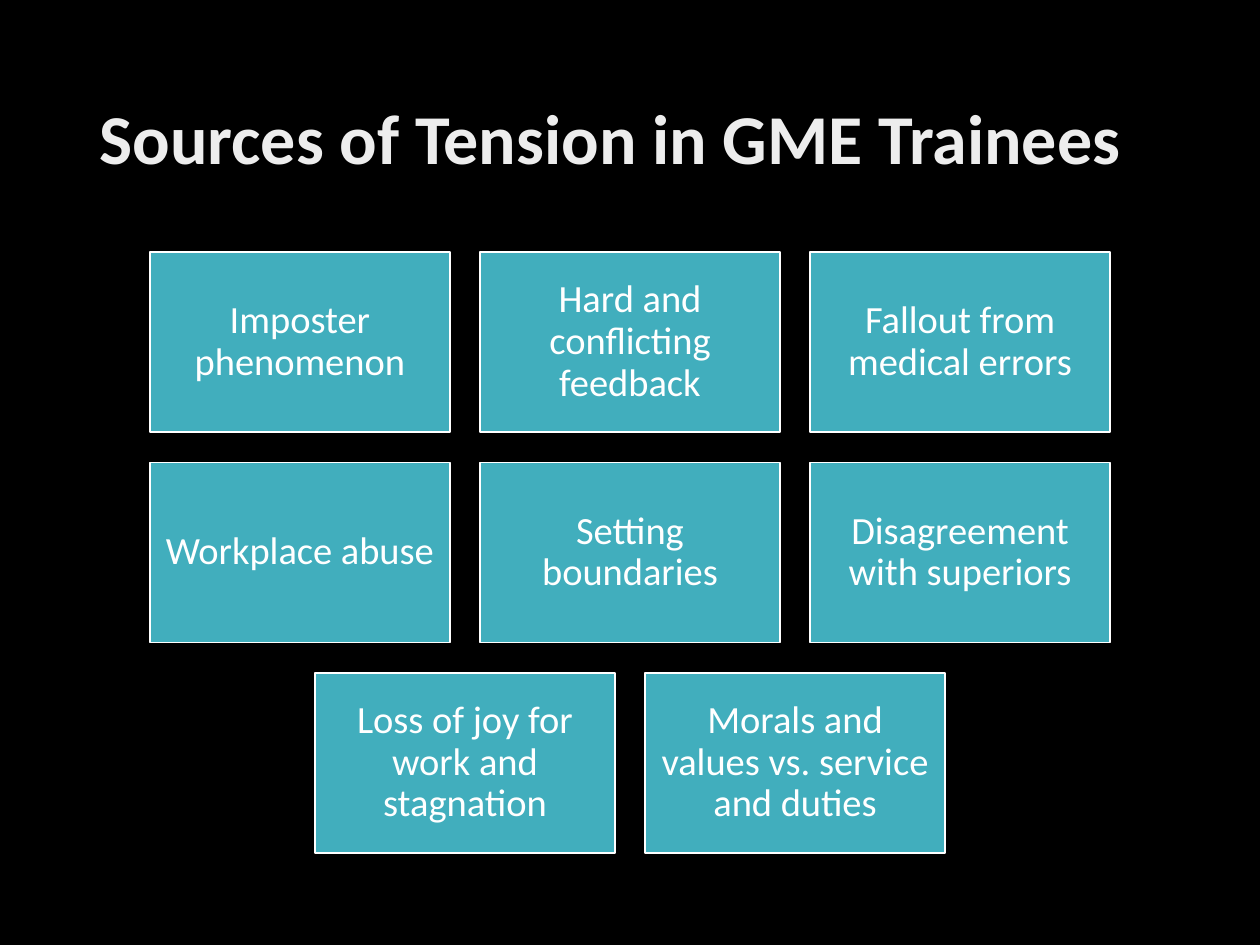
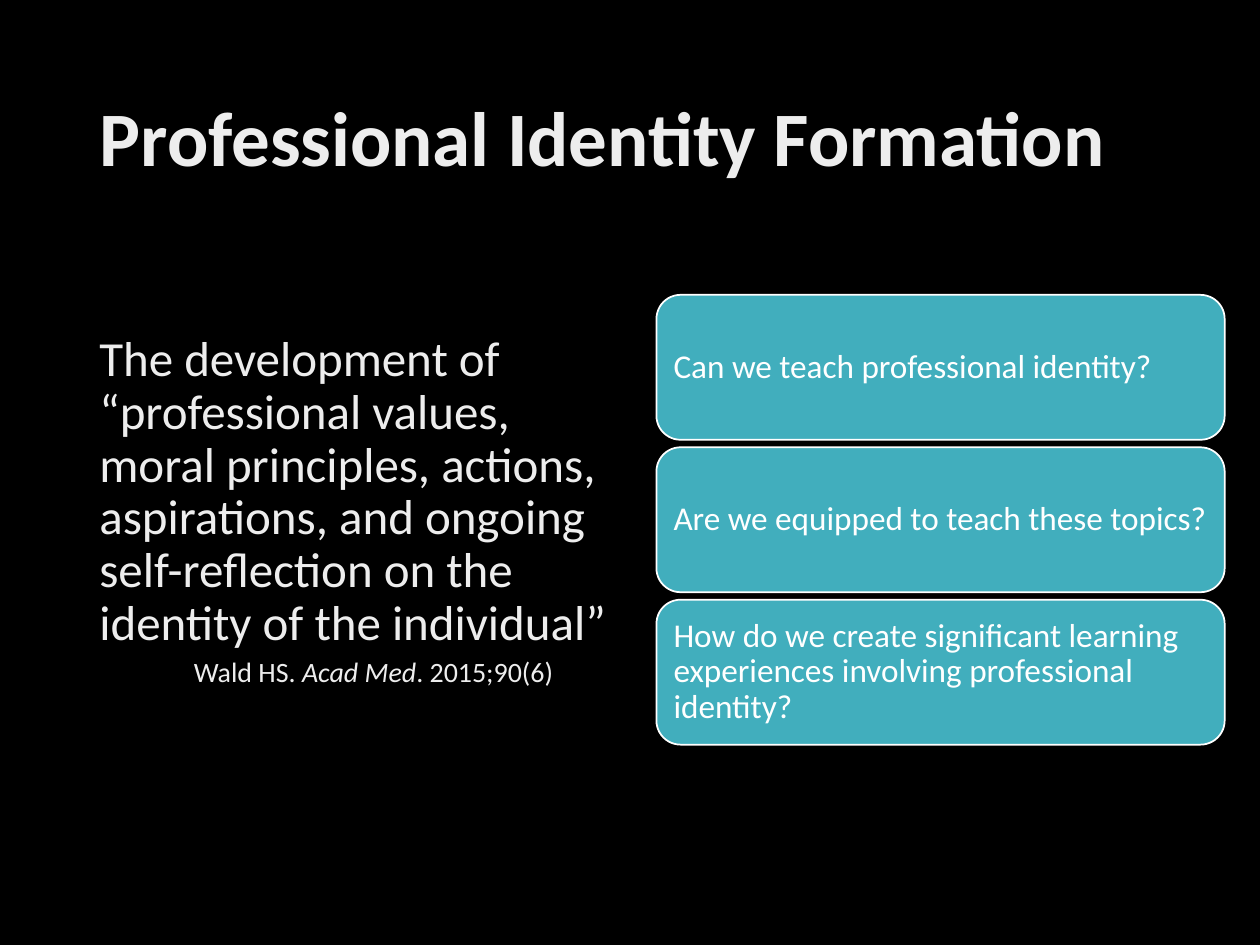
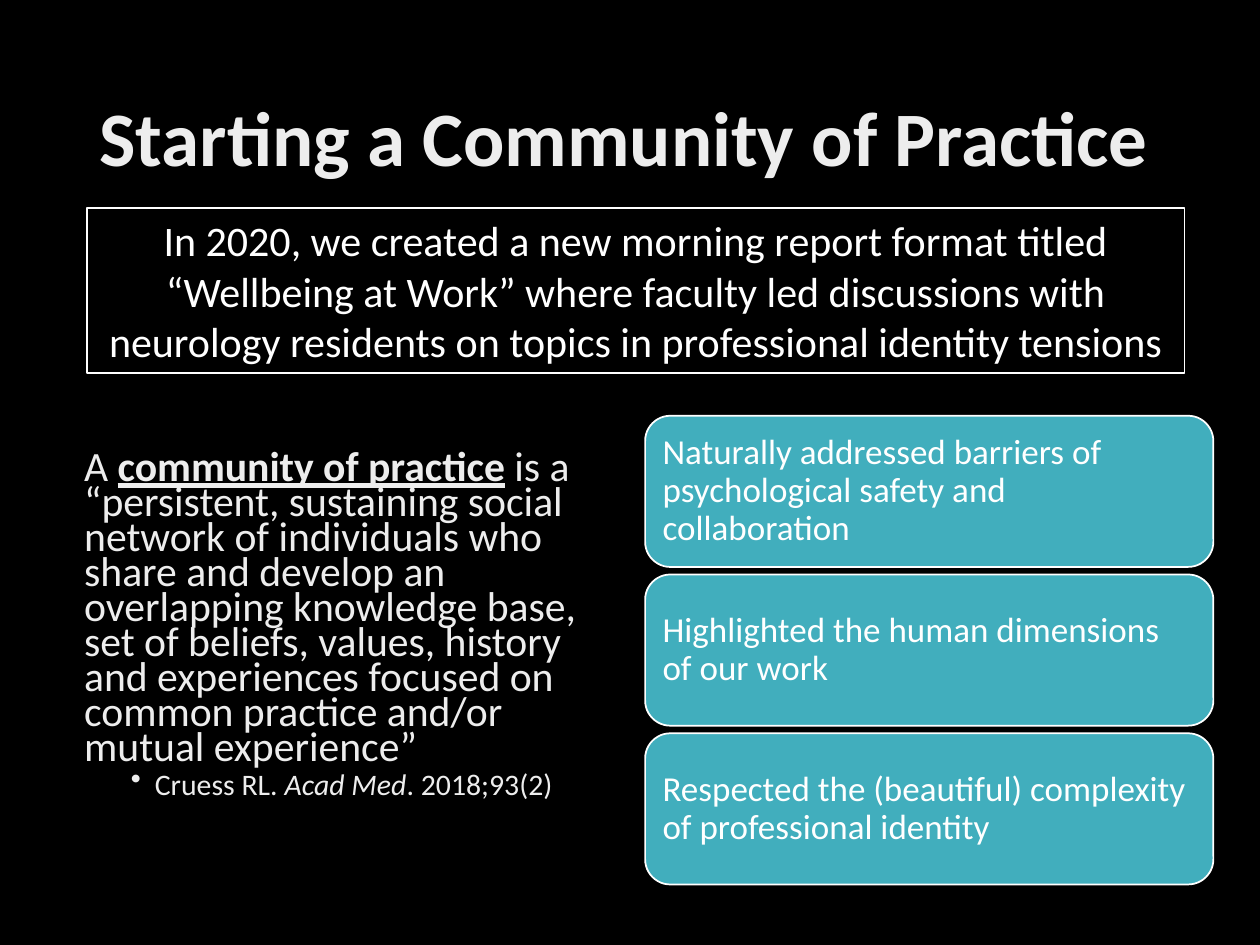
import pptx
import pptx.dml.color
import pptx.enum.shapes
import pptx.enum.text
import pptx.oxml.ns
import pptx.util
import lxml.etree

Inches = pptx.util.Inches
Pt = pptx.util.Pt
Shape = pptx.enum.shapes.MSO_SHAPE
Align = pptx.enum.text.PP_ALIGN
Anchor = pptx.enum.text.MSO_ANCHOR

FONT = "Calibri"
BLACK = "000000"
WHITE = "FFFFFF"
PALE = "EDEDED"
TEAL = "41AEBD"

WIDTH = 10
TILE = (2.38, 1.43)
TILE_GAP = 0.24
CARD_WIDTH = 4.51
CARD_GAP = 0.06

TENSIONS = [
    ["Imposter phenomenon", "Hard and conflicting feedback", "Fallout from medical errors"],
    ["Workplace abuse", "Setting boundaries", "Disagreement with superiors"],
    ["Loss of joy for work and stagnation", "Morals and values vs. service and duties"],
]
TOPICS = [
    "Can we teach professional identity?",
    "Are we equipped to teach these topics?",
    "How do we create significant learning experiences involving professional identity?",
]
GAINS = [
    "Naturally addressed barriers of psychological safety and collaboration",
    "Highlighted the human dimensions of our work",
    "Respected the (beautiful) complexity of professional identity",
]
REPORT = (
    "In 2020, we created a new morning report format titled “Wellbeing at Work” "
    "where faculty led discussions with neurology residents on topics in "
    "professional identity tensions"
)
VALUES = [(
    "The development of “professional values, moral principles, actions, "
    "aspirations, and ongoing self-reflection on the identity of the individual”", {}
)]
WALD = [("Wald HS. ", {}), ("Acad Med", {"italic": True}), (". 2015;90(6)", {})]
GROUP = [
    ("A ", {}),
    ("community of practice", {"bold": True, "underline": True}),
    (" is a “persistent, sustaining social network of individuals who share and "
     "develop an overlapping knowledge base, set of beliefs, values, history and "
     "experiences focused on common practice and/or mutual experience”", {}),
]
CRUESS = [("Cruess RL. ", {}), ("Acad Med", {"italic": True}), (". 2018;93(2)", {})]


def color(code):
    return pptx.dml.color.RGBColor.from_string(code)


def apply(target, values):
    for name, value in values.items():
        setattr(target, name, value)


def style(font, size, code, **extra):
    apply(font, {"name": FONT, "size": Pt(size), **extra})
    font.color.rgb = color(code)


def place(shape, left, top, width, height):
    apply(shape, {"left": Inches(left), "top": Inches(top),
                  "width": Inches(width), "height": Inches(height)})


def add_page(deck, title, size=44):
    slide = deck.slides.add_slide(deck.slide_layouts[5])
    head = slide.shapes.title
    place(head, 0.69, 0.4, 8.62, 1.45)
    apply(head.text_frame, {"text": title, "word_wrap": True, "vertical_anchor": Anchor.MIDDLE})
    para = head.text_frame.paragraphs[0]
    apply(para, {"alignment": Align.LEFT, "line_spacing": 0.9})
    style(para.runs[0].font, size, PALE, bold=True)
    return slide


def add_box(slide, kind, spot, text, size, fill=TEAL, line=1, inset=None,
            align=Align.CENTER, spacing=0.9):
    box = slide.shapes.add_shape(kind, *map(Inches, spot))
    box.shadow.inherit = False
    if fill:
        box.fill.solid()
        box.fill.fore_color.rgb = color(fill)
    else:
        box.fill.background()
    box.line.color.rgb = color(WHITE)
    box.line.width = Pt(line)
    frame = box.text_frame
    apply(frame, {"text": text, "word_wrap": True, "vertical_anchor": Anchor.MIDDLE})
    if inset:
        sides = ("left", "top", "right", "bottom")
        apply(frame, {f"margin_{side}": Inches(inset) for side in sides})
    para = frame.paragraphs[0]
    apply(para, {"alignment": align, "line_spacing": spacing})
    style(para.runs[0].font, size, WHITE)


def add_tiles(slide, rows, top):
    width, height = TILE
    for row, names in enumerate(rows):
        span = len(names) * (width + TILE_GAP) - TILE_GAP
        for col, name in enumerate(names):
            left = (WIDTH - span) / 2 + col * (width + TILE_GAP)
            spot = (left, top + row * (height + TILE_GAP), width, height)
            add_box(slide, Shape.RECTANGLE, spot, name, 22, inset=0.09)


def add_cards(slide, texts, left, top, height, size):
    for row, text in enumerate(texts):
        spot = (left, top + row * (height + CARD_GAP), CARD_WIDTH, height)
        add_box(slide, Shape.ROUNDED_RECTANGLE, spot, text, size, inset=0.08, align=Align.LEFT)


def add_runs(para, parts, size, spacing):
    para.line_spacing = spacing
    for text, extra in parts:
        run = para.add_run()
        run.text = text
        style(run.font, size, PALE, **extra)


def indent(para, left, first, mark=None):
    props = para._p.get_or_add_pPr()
    props.set("marL", str(Inches(left)))
    props.set("indent", str(Inches(first)))
    if mark:
        bullet = lxml.etree.SubElement(props, pptx.oxml.ns.qn("a:buChar"))
        bullet.set("char", mark)


def add_quote(slide, left, top, quote, size, cite, small, spacing, margin, first=0, mark=None):
    box = slide.shapes.add_textbox(*map(Inches, (left, top, 4.31, 3.05)))
    frame = box.text_frame
    frame.word_wrap = True
    add_runs(frame.paragraphs[0], quote, size, spacing)
    para = frame.add_paragraph()
    indent(para, margin, first, mark)
    para.space_before = Pt(3.8)
    add_runs(para, cite, small, spacing)


def main():
    deck = pptx.Presentation()
    apply(deck, {"slide_width": Inches(WIDTH), "slide_height": Inches(7.5)})
    back = deck.slide_master.background.fill
    back.solid()
    back.fore_color.rgb = color(BLACK)

    slide = add_page(deck, "Sources of Tension in GME Trainees", 40)
    add_tiles(slide, TENSIONS, 2)

    slide = add_page(deck, "Professional Identity Formation")
    add_quote(slide, 0.69, 2.6, VALUES, 28, WALD, 16, 0.9, 0.75)
    add_cards(slide, TOPICS, 5.21, 2.34, 1.15, 19)

    slide = add_page(deck, "Starting a Community of Practice")
    add_quote(slide, 0.57, 3.55, GROUP, 23.8, CRUESS, 17, 0.7, 0.56, -0.19, "•")
    add_cards(slide, GAINS, 5.12, 3.3, 1.2, 20)
    add_box(slide, Shape.RECTANGLE, (0.69, 1.65, 8.71, 1.31), REPORT, 24,
            fill=None, line=0.75, spacing=1.0)

    deck.save("out.pptx")


if __name__ == "__main__":
    main()
